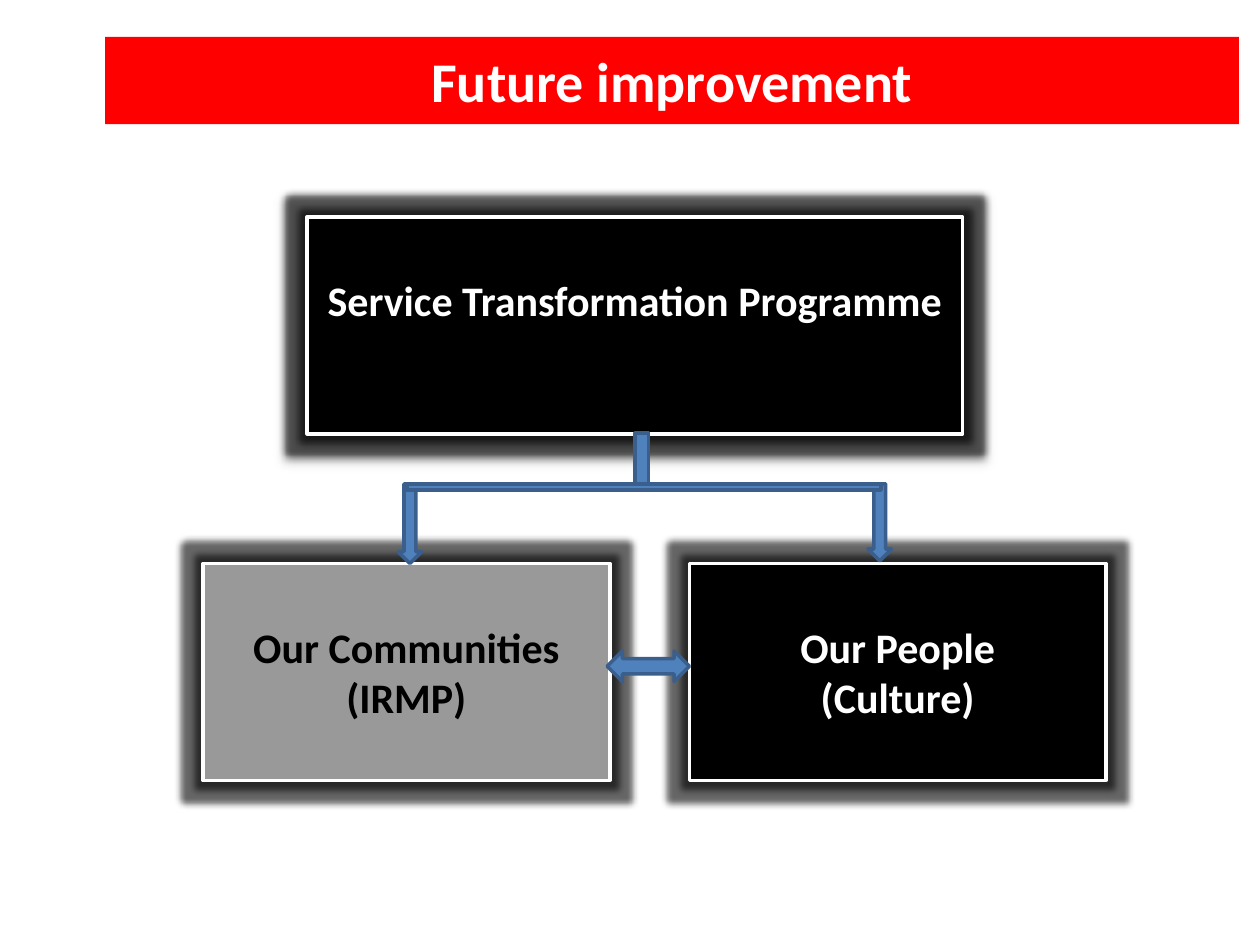
from lxml import etree
from pptx import Presentation
from pptx import util as u
from pptx.dml.color import RGBColor
from pptx.enum import shapes, text
from pptx.oxml.ns import qn

WHITE = RGBColor(0xFF, 0xFF, 0xFF)
BLACK = RGBColor(0x00, 0x00, 0x00)
GREY = RGBColor(0x99, 0x99, 0x99)
RED = RGBColor(0xFF, 0x00, 0x00)
BLUE = RGBColor(0x4F, 0x81, 0xBD)
NAVY = RGBColor(0x3A, 0x5F, 0x8C)

BOX_HEIGHT = 124
LOWER_TOP = 322
SHAPE = shapes.MSO_SHAPE


def apply_format(target, values):
    for name, value in values.items():
        setattr(target, name, value)


def write_lines(frame, lines, size, colour):
    for index, line in enumerate(lines):
        para = frame.add_paragraph() if index else frame.paragraphs[0]
        para.alignment = text.PP_ALIGN.CENTER
        span = para.add_run()
        span.text = line
        apply_format(span.font, {"name": "Calibri", "size": u.Pt(size), "bold": True})
        span.font.color.rgb = colour


def add_block(page, kind, bounds, fill, line):
    block = page.shapes.add_shape(kind, *map(u.Pt, bounds))
    block.shadow.inherit = False
    block.fill.solid()
    block.fill.fore_color.rgb = fill
    block.line.color.rgb = line
    block.line.width = u.Pt(2)
    return block


def add_effect(box, tag, alpha, **attributes):
    effects = box._element.spPr.find(qn("a:effectLst"))
    effect = etree.SubElement(effects, qn(tag), attributes)
    colour = etree.SubElement(effect, qn("a:srgbClr"), val=str(BLACK))
    etree.SubElement(colour, qn("a:alpha"), val=str(alpha * 1000))


def add_box(page, bounds, lines, fill, colour):
    box = add_block(page, SHAPE.RECTANGLE, bounds, fill, WHITE)
    add_effect(box, "a:glow", 60, rad=str(u.Pt(8)))
    apply_format(box.text_frame, {
        "word_wrap": True,
        "vertical_anchor": text.MSO_ANCHOR.TOP,
        "margin_top": u.Pt(33),
    })
    write_lines(box.text_frame, lines, 24, colour)
    return box


def format_title(title, words):
    apply_format(title, {
        "left": u.Pt(60), "top": u.Pt(21), "width": u.Pt(648), "height": u.Pt(50),
    })
    title.fill.solid()
    title.fill.fore_color.rgb = RED
    title.text_frame.vertical_anchor = text.MSO_ANCHOR.MIDDLE
    write_lines(title.text_frame, [words], 32, WHITE)


def main():
    deck = Presentation()
    deck.slide_width, deck.slide_height = u.Pt(720), u.Pt(540)
    page = deck.slides.add_slide(deck.slide_layouts[5])

    add_box(page, (116, LOWER_TOP, 232.5, BOX_HEIGHT),
            ["Our Communities", "(IRMP)"], GREY, BLACK)
    add_box(page, (394, LOWER_TOP, 238, BOX_HEIGHT),
            ["Our People", "(Culture)"], BLACK, WHITE)
    programme = add_box(page, (175.5, 124, 374.5, BOX_HEIGHT),
                        ["Service Transformation Programme"], BLACK, WHITE)
    add_effect(programme, "a:outerShdw", 40, blurRad=str(u.Pt(4)),
               dist=str(u.Pt(3)), dir="5400000", rotWithShape="0")

    for kind, bounds in (
        (SHAPE.DOWN_ARROW, (227.5, 276.5, 13.5, 45.5)),
        (SHAPE.LEFT_RIGHT_ARROW, (347, 372, 47, 17.5)),
        (SHAPE.DOWN_ARROW, (496, 276.5, 13.5, 44)),
        (SHAPE.FLOWCHART_PROCESS, (363, 247.5, 7.5, 29.5)),
        (SHAPE.FLOWCHART_PROCESS, (232.5, 276.5, 271, 3.5)),
    ):
        add_block(page, kind, bounds, BLUE, NAVY)

    format_title(page.shapes.title, "Future improvement")
    deck.save("out.pptx")


if __name__ == "__main__":
    main()
